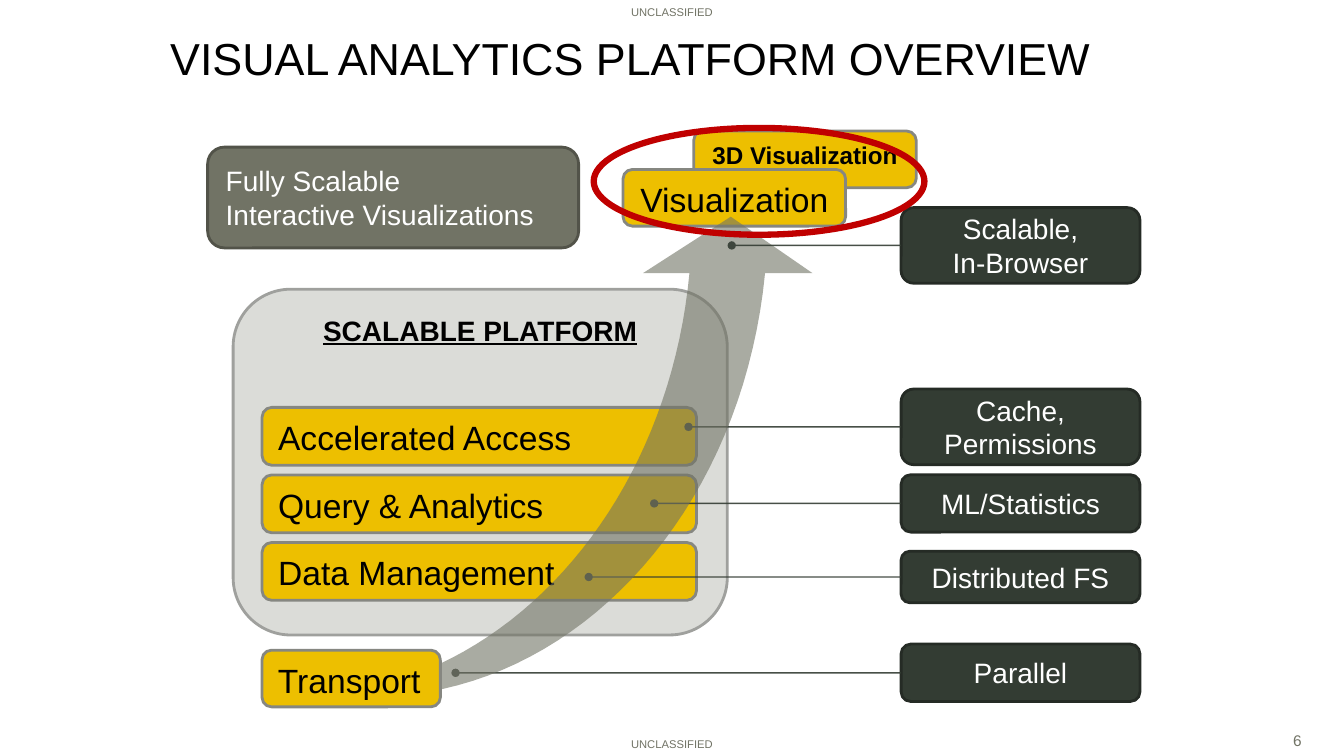
from dataclasses import dataclass

from lxml.etree import SubElement
from pptx import Presentation
from pptx.dml.color import RGBColor
from pptx.enum.shapes import MSO_CONNECTOR, MSO_SHAPE
from pptx.enum.text import MSO_ANCHOR, PP_ALIGN
from pptx.oxml.ns import qn
from pptx.util import Pt


@dataclass(frozen=True)
class Theme:
    font: str = "Arial"
    black: str = "000000"
    white: str = "FFFFFF"
    olive: str = "717365"
    olive_edge: str = "525349"
    gold: str = "EDBF00"
    gold_edge: str = "868781"
    pale: str = "DBDCD8"
    pale_edge: str = "9FA09D"
    dark: str = "333C33"
    dark_edge: str = "252B25"
    red: str = "C00000"
    title_size: float = 32
    layer_size: float = 24
    label_size: float = 20
    small_label_size: float = 17.3
    page_size: float = 11
    marking_size: float = 8


THEME = Theme()
GOLD = (THEME.gold, THEME.gold_edge)
PALE = (THEME.pale, THEME.pale_edge)
DARK = (THEME.dark, THEME.dark_edge)
OLIVE = (THEME.olive, THEME.olive_edge)
LEFT, CENTER = PP_ALIGN.LEFT, PP_ALIGN.CENTER
TOP, MIDDLE, BOTTOM = MSO_ANCHOR.TOP, MSO_ANCHOR.MIDDLE, MSO_ANCHOR.BOTTOM


# ---- Shared helpers: boxes are (left, top, width, height) in points ----
def lengths(*values):
    return [Pt(value) for value in values]


def set_alpha(color_parent, percent):
    color = next(color_parent.iter(qn("a:srgbClr")))
    SubElement(color, qn("a:alpha"), val=str(percent * 1000))


def write(holder, text, size, color, align=LEFT, anchor=TOP, inset=(7.2, 3.6), **style):
    frame = holder.text_frame
    across, down = lengths(*inset)
    frame_format = {"word_wrap": True, "vertical_anchor": anchor,
                    "margin_left": across, "margin_right": across,
                    "margin_top": down, "margin_bottom": down}
    for name, value in frame_format.items():
        setattr(frame, name, value)
    frame.text = text
    font_format = {"name": THEME.font, "size": Pt(size), **style}
    for paragraph in frame.paragraphs:
        paragraph.alignment = align
        for run in paragraph.runs:
            for name, value in font_format.items():
                setattr(run.font, name, value)
            run.font.color.rgb = RGBColor.from_string(color)


def add_label(slide, box, text, size, color, **layout):
    write(slide.shapes.add_textbox(*lengths(*box)), text, size, color, **layout)


def add_block(slide, box, text, size, colors, color=THEME.black, **layout):
    block = slide.shapes.add_shape(MSO_SHAPE.ROUNDED_RECTANGLE, *lengths(*box))
    fill, edge = colors
    block.shadow.inherit = False
    block.fill.solid()
    block.fill.fore_color.rgb = RGBColor.from_string(fill)
    block.line.color.rgb = RGBColor.from_string(edge)
    block.line.width = Pt(2)
    write(block, text, size, color, inset=(9.4, 5), **layout)
    return block


# ---- Markings, page number and title ----
def add_page_frame(slide, box):
    left, top, width, height = box
    strip = 17.3
    markings = [(left, top, width, strip),
                (left + 144, top + height - strip, width - 288, strip)]
    for marking in markings:
        add_label(slide, marking, "UNCLASSIFIED", THEME.marking_size, THEME.olive,
                  align=CENTER, anchor=BOTTOM)
    add_label(slide, (left + width - 43.5, top + height - 21, 43.5, 21), "6",
              THEME.page_size, THEME.olive)
    add_label(slide, (left + 114.5, top + 21.6, 706.3, 39.6),
              "VISUAL ANALYTICS PLATFORM OVERVIEW", THEME.title_size, THEME.black,
              anchor=MIDDLE)


# ---- Platform panel with its stacked layers ----
def add_platform(slide, box):
    left, top, width, height = box
    add_block(slide, box, "SCALABLE PLATFORM", THEME.label_size, PALE,
              align=CENTER, anchor=TOP, bold=True, underline=True)
    # The heading sits below the panel's rounded corner
    layers = ["Accelerated Access", "Query & Analytics", "Data Management"]
    for row, layer in enumerate(layers):
        add_block(slide, (left + 20.7, top + 84.4 + row * 48.25, 310.3, 41.3),
                  layer, THEME.layer_size, GOLD)


# ---- One capability box and the pointer that ties it to the diagram ----
def add_capability(slide, box, text, dot_x):
    capability = add_block(slide, box, text, THEME.label_size, DARK, THEME.white,
                           align=CENTER, anchor=MIDDLE)
    left, top, _, height = box
    middle = top + height / 2
    pointer = slide.shapes.add_connector(
        MSO_CONNECTOR.STRAIGHT, *lengths(dot_x, middle, left, middle))
    pointer.end_connect(capability, 1)
    pointer.line.color.rgb = RGBColor.from_string(THEME.dark)
    pointer.line.width = Pt(1)
    line = pointer.line._get_or_add_ln()
    set_alpha(line, 89)
    SubElement(line, qn("a:headEnd"), type="oval")
    SubElement(pointer._element.spPr, qn("a:effectLst"))


# ---- Curved arrow rising from transport to visualization ----
def curve(start, control_1, control_2, end, steps=40):
    for step in range(1, steps + 1):
        t = step / steps
        weights = ((1 - t) ** 3, 3 * t * (1 - t) ** 2, 3 * t * t * (1 - t), t ** 3)
        yield tuple(sum(weight * value for weight, value in zip(weights, axis))
                    for axis in zip(start, control_1, control_2, end))


def add_rising_arrow(slide, box):
    left, top, width, height = box
    tip, tail = (284.4, 0), (0, height)
    neck = 40.3
    outer_neck, inner_neck = (308.9, neck), (254.9, neck)
    outline = [(width, neck), outer_neck,
               *curve(outer_neck, (290.9, 225.4), (154.1, 359.3), tail),
               *curve(tail, (133.2, 326.2), (239.8, 200.9), inner_neck),
               (221.8, neck)]
    builder = slide.shapes.build_freeform(*lengths(left + tip[0], top + tip[1]))
    builder.add_line_segments([lengths(left + x, top + y) for x, y in outline])
    arrow = builder.convert_to_shape()
    arrow.shadow.inherit = False
    arrow.fill.solid()
    arrow.fill.fore_color.rgb = RGBColor.from_string(THEME.olive)
    set_alpha(arrow._element.spPr, 60)
    arrow.line.fill.background()


# ---- Red ring around the visualization blocks ----
def add_highlight(slide, box):
    ring = slide.shapes.add_shape(MSO_SHAPE.OVAL, *lengths(*box))
    ring.shadow.inherit = False
    ring.fill.background()
    ring.line.color.rgb = RGBColor.from_string(THEME.red)
    ring.line.width = Pt(4.5)


# ---- Whole diagram, from back to front ----
def add_diagram(slide, box):
    left, top, width, _ = box

    def place(x, y, w, h):
        return left + x, top + y, w, h

    capability_width = 170.6
    capability_x = width - capability_width

    def capability(text, y, height, dot_x):
        add_capability(slide, place(capability_x, y, capability_width, height),
                       text, left + dot_x)

    add_block(slide, place(347.2, 2.2, 159, 40.5), "3D Visualization",
              THEME.small_label_size, GOLD, align=CENTER, bold=True)
    add_platform(slide, place(18.2, 115.2, 353, 247))
    for text, y, height, dot_x in [("Cache, Permissions", 186.5, 54, 343.5),
                                   ("ML/Statistics", 247.7, 41, 319),
                                   ("Distributed FS", 302.4, 36.7, 272.2),
                                   ("Parallel", 368.7, 41, 177.1)]:
        capability(text, y, height, dot_x)
    add_block(slide, place(296.7, 29.6, 159, 40.5), "Visualization",
              THEME.layer_size, GOLD, align=CENTER)
    add_rising_arrow(slide, place(89.3, 63.4, 342.7, 341.3))
    add_block(slide, place(38.9, 373, 127.4, 40.5), "Transport", THEME.layer_size, GOLD)
    capability("Scalable,\nIn-Browser", 56.9, 54, 374.4)
    add_block(slide, place(0, 13.7, 265, 72), "Fully Scalable\nInteractive Visualizations",
              THEME.label_size, OLIVE, THEME.white, anchor=MIDDLE)
    add_highlight(slide, place(275.8, 0, 236.2, 76.3))


def main():
    deck = Presentation()
    deck.slide_width, deck.slide_height = lengths(960, 540)
    slide = deck.slides.add_slide(deck.slide_layouts[6])
    add_page_frame(slide, (0, 0, 960, 540))
    add_diagram(slide, (148.3, 91.4, 666, 413.5))
    deck.save("out.pptx")


if __name__ == "__main__":
    main()
